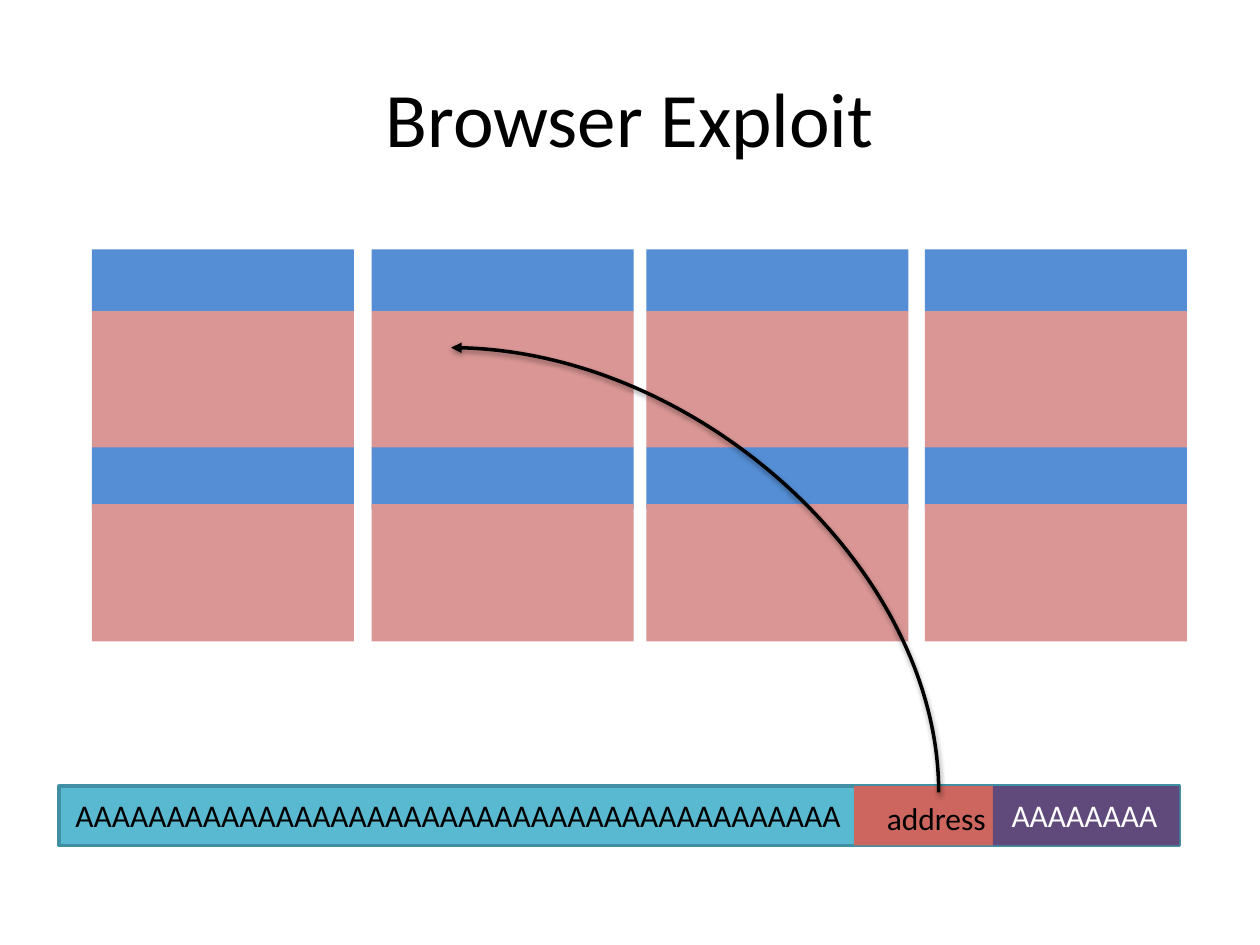
from typing import NamedTuple

from lxml import etree
from pptx import Presentation
from pptx.dml.color import RGBColor
from pptx.enum.shapes import MSO_CONNECTOR, MSO_SHAPE
from pptx.enum.text import MSO_ANCHOR, PP_ALIGN
from pptx.oxml import parse_xml
from pptx.oxml.ns import nsdecls, qn
from pptx.util import Inches, Pt

RECTANGLE = MSO_SHAPE.RECTANGLE
CURVE = MSO_CONNECTOR.CURVE
MIDDLE = MSO_ANCHOR.MIDDLE
CENTER = PP_ALIGN.CENTER
LEFT = PP_ALIGN.LEFT

FONT = "Calibri"
BLACK = RGBColor(0x00, 0x00, 0x00)
WHITE = RGBColor(0xFF, 0xFF, 0xFF)
BLUE = RGBColor(0x55, 0x8E, 0xD5)
PINK = RGBColor(0xD9, 0x96, 0x94)
CYAN = RGBColor(0x59, 0xB9, 0xD0)
TEAL = RGBColor(0x41, 0x8F, 0xA2)
RED = RGBColor(0xCD, 0x66, 0x5F)
PURPLE = RGBColor(0x60, 0x4A, 0x7B)


class Box(NamedTuple):
    left: float
    top: float
    width: float
    height: float


class Band(NamedTuple):
    top: float
    height: float
    color: RGBColor


class Segment(NamedTuple):
    left: float
    right: float
    fill: RGBColor
    label: str
    label_box: Box
    label_color: RGBColor
    wrap: bool


HEAP_LEFTS = (0.73, 2.95, 5.13, 7.34)
HEAP_WIDTH = 2.08
HEAP_BANDS = (
    Band(1.98, 0.49, BLUE),
    Band(2.47, 1.09, PINK),
    Band(3.55, 0.49, BLUE),
    Band(4.00, 1.09, PINK),
)

BUFFER = Box(0.47, 6.24, 8.89, 0.47)
FILLER = Segment(0.47, 6.78, CYAN, "A" * 42, Box(0.5, 6.27, 6.39, 0.4), BLACK, True)
ADDRESS = Segment(6.78, 7.88, RED, "address", Box(6.94, 6.29, 1, 0.4), BLACK, False)
TRAILER = Segment(7.88, 9.36, PURPLE, "A" * 8, Box(7.93, 6.27, 1.37, 0.4), WHITE, False)


def inches(box: Box) -> list:
    return [Inches(length) for length in box]


def add_block(slide, box: Box, color: RGBColor) -> None:
    block = slide.shapes.add_shape(RECTANGLE, *inches(box))
    block.shadow.inherit = False
    block.fill.solid()
    block.fill.fore_color.rgb = color
    block.line.fill.background()


def add_outline(slide, box: Box, color: RGBColor) -> None:
    outline = slide.shapes.add_shape(RECTANGLE, *inches(box))
    outline.shadow.inherit = False
    outline.fill.background()
    outline.line.color.rgb = color
    outline.line.width = Pt(2)


def add_label(slide, box: Box, text: str, size: int, color: RGBColor,
              wrap: bool = True, align=LEFT):
    frame = slide.shapes.add_textbox(*inches(box)).text_frame
    frame.word_wrap = wrap
    frame.text = text
    paragraph = frame.paragraphs[0]
    paragraph.alignment = align
    font = paragraph.runs[0].font
    font.name = FONT
    font.size = Pt(size)
    font.color.rgb = color
    return frame


def add_segment(slide, segment: Segment) -> None:
    width = segment.right - segment.left
    add_block(slide, Box(segment.left, BUFFER.top, width, BUFFER.height), segment.fill)


def add_segment_label(slide, segment: Segment) -> None:
    add_label(slide, segment.label_box, segment.label, 18, segment.label_color, segment.wrap)


def add_jump(slide, start: tuple[float, float], end: tuple[float, float]) -> None:
    """Quarter curve that leaves start upwards and reaches end leftwards."""
    center_x, center_y = (start[0] + end[0]) / 2, (start[1] + end[1]) / 2
    # The frame is turned by 270 degrees, so its sides are swapped
    half_width, half_height = (start[1] - end[1]) / 2, (start[0] - end[0]) / 2
    jump = slide.shapes.add_connector(
        CURVE,
        Inches(center_x - half_width), Inches(center_y + half_height),
        Inches(center_x + half_width), Inches(center_y - half_height),
    )
    jump.line.color.rgb = BLACK
    jump.line.width = Pt(2)
    properties = jump._element.spPr
    properties.find(qn("a:xfrm")).set("rot", str(270 * 60000))
    properties.find(qn("a:prstGeom")).set("prst", "curvedConnector2")
    etree.SubElement(properties.find(qn("a:ln")), qn("a:tailEnd"), type="triangle")
    properties.append(parse_xml(
        f'<a:effectLst {nsdecls("a")}>'
        f'<a:outerShdw blurRad="{Pt(3.1)}" dist="{Pt(1.6)}" dir="5400000" rotWithShape="0">'
        '<a:srgbClr val="000000"><a:alpha val="38000"/></a:srgbClr>'
        '</a:outerShdw></a:effectLst>'
    ))


def main() -> None:
    presentation = Presentation()
    presentation.slide_width = Inches(10)
    presentation.slide_height = Inches(7.5)
    slide = presentation.slides.add_slide(presentation.slide_layouts[6])

    # Title
    title = add_label(slide, Box(0.5, 0.3, 9, 1.25), "Browser Exploit", 44, BLACK, align=CENTER)
    title.vertical_anchor = MIDDLE

    # Overflowed buffer: the outline lies over the filler and under the rest
    add_segment(slide, FILLER)
    add_outline(slide, BUFFER, TEAL)
    add_segment_label(slide, FILLER)
    for segment in (ADDRESS, TRAILER):
        add_segment(slide, segment)
        add_segment_label(slide, segment)

    # Sprayed heap
    for left in HEAP_LEFTS:
        for band in HEAP_BANDS:
            add_block(slide, Box(left, band.top, HEAP_WIDTH, band.height), band.color)

    # Jump from the address into the heap
    add_jump(slide, (7.45, 6.29), (3.58, 2.76))

    presentation.save("out.pptx")


if __name__ == "__main__":
    main()
